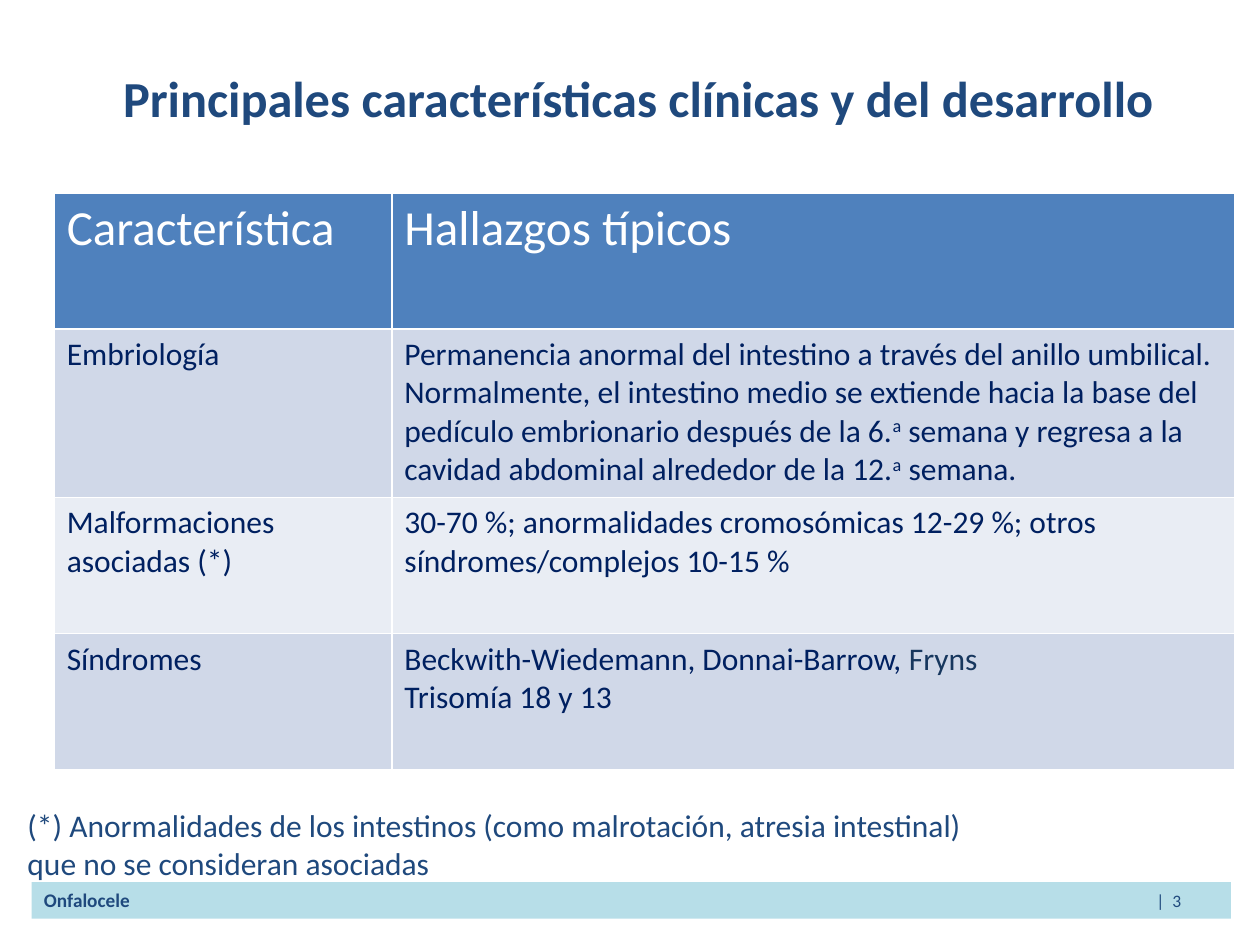
from typing import NamedTuple

from lxml import etree
from pptx import Presentation
from pptx import util as u
from pptx.dml.color import RGBColor
from pptx.enum import shapes, text
from pptx.oxml.ns import qn

BLUE = RGBColor(0x1F, 0x49, 0x7D)
NAVY = RGBColor(0x00, 0x20, 0x60)
SLATE = RGBColor(0x17, 0x37, 0x5E)
WHITE = RGBColor(0xFF, 0xFF, 0xFF)
HEAD = RGBColor(0x4F, 0x81, 0xBD)
BANDS = RGBColor(0xD0, 0xD8, 0xE8), RGBColor(0xE9, 0xED, 0xF4)
AQUA = RGBColor(0xB7, 0xDE, 0xE8)


class Run(NamedTuple):
    text: str
    color: RGBColor = NAVY
    size: float = 18
    bold: bool = False
    sup: bool = False


class Box(NamedTuple):
    left: float
    top: float
    width: float
    height: float

    def inches(self) -> list:
        return [u.Inches(v) for v in self]


def write(frame, *paras: list[Run]) -> None:
    """Fill a text frame, one list of runs per paragraph."""
    for i, runs in enumerate(paras):
        para = frame.add_paragraph() if i else frame.paragraphs[0]
        for item in runs:
            run = para.add_run()
            run.text = item.text
            style = {"name": "Calibri", "size": u.Pt(item.size), "bold": item.bold}
            for key, val in style.items():
                setattr(run.font, key, val)
            run.font.color.rgb = item.color
            if item.sup:
                run._r.get_or_add_rPr().set("baseline", "30000")


def add_tab(para, pos: float) -> None:
    tabs = etree.SubElement(para._p.get_or_add_pPr(), qn("a:tabLst"))
    etree.SubElement(tabs, qn("a:tab"), pos=str(u.Inches(pos)), algn="l")


def add_table(slide, box: Box, cols: list[float], heights: list[float], rows: list) -> None:
    table = slide.shapes.add_table(len(rows), len(cols), *box.inches()).table
    for col, width in zip(table.columns, cols):
        col.width = u.Inches(width)
    for i, (row, height, cells) in enumerate(zip(table.rows, heights, rows)):
        row.height = u.Inches(height)
        for cell, paras in zip(row.cells, cells):
            cell.fill.solid()
            cell.fill.fore_color.rgb = BANDS[(i - 1) % 2] if i else HEAD
            write(cell.text_frame, *paras)


# Each cell is a list of paragraphs
ROWS = [
    [[[Run(t, WHITE, 28)]] for t in ("Característica", "Hallazgos típicos")],
    [
        [[Run("Embriología")]],
        [[
            Run("Permanencia anormal del intestino a través del anillo umbilical. "
                "Normalmente, el intestino medio se extiende hacia la base del "
                "pedículo embrionario después de la 6."),
            Run("a", sup=True),
            Run(" semana y regresa a la cavidad abdominal alrededor de la 12."),
            Run("a", sup=True),
            Run(" semana."),
        ]],
    ],
    [
        [[Run("Malformaciones asociadas (*)")]],
        [[Run("30-70 %; anormalidades cromosómicas 12-29 %; otros "
              "síndromes/complejos 10-15 %")]],
    ],
    [
        [[Run("Síndromes")]],
        [[Run("Beckwith-Wiedemann, Donnai-Barrow, "), Run("Fryns", SLATE)],
         [Run("Trisomía 18 y 13")]],
    ],
]


def main() -> None:
    deck = Presentation()
    deck.slide_width, deck.slide_height = u.Inches(10), u.Inches(7.5)
    slide = deck.slides.add_slide(deck.slide_layouts[5])

    # Footer bar, page number on a tab stop
    bar = slide.shapes.add_shape(
        shapes.MSO_SHAPE.RECTANGLE, *Box(0.25, 7, 9.52, 0.29).inches())
    bar.shadow.inherit = False
    bar.fill.solid()
    bar.fill.fore_color.rgb = AQUA
    bar.line.fill.background()
    write(bar.text_frame, [Run("Onfalocele\t", BLUE, 11, True), Run("|  3", BLUE, 10)])
    foot = bar.text_frame.paragraphs[0]
    foot.alignment = text.PP_ALIGN.LEFT
    add_tab(foot, 8.83)

    # Title
    title = slide.shapes.title
    place = dict(zip(("left", "top", "width", "height"), Box(0.57, 0.44, 9, 0.62).inches()))
    for key, val in place.items():
        setattr(title, key, val)
    frame = title.text_frame
    frame.vertical_anchor = text.MSO_ANCHOR.BOTTOM
    write(frame, [Run("Principales características clínicas y del desarrollo", BLUE, 28.8, True)])
    frame.paragraphs[0].alignment = text.PP_ALIGN.CENTER
    frame.paragraphs[0].line_spacing = u.Pt(30)

    # Findings table
    add_table(slide, Box(0.43, 1.53, 9.37, 4.57), [2.68, 6.69],
              [1.08, 1.34, 1.08, 1.08], ROWS)

    # Footnote
    note = slide.shapes.add_textbox(*Box(0.12, 6.35, 7.7, 0.71).inches())
    note.text_frame.word_wrap = False
    write(note.text_frame,
          [Run("(*) Anormalidades de los intestinos (como malrotación, atresia intestinal)", BLUE)],
          [Run("que no se consideran asociadas", BLUE)])

    deck.save("out.pptx")


if __name__ == "__main__":
    main()
